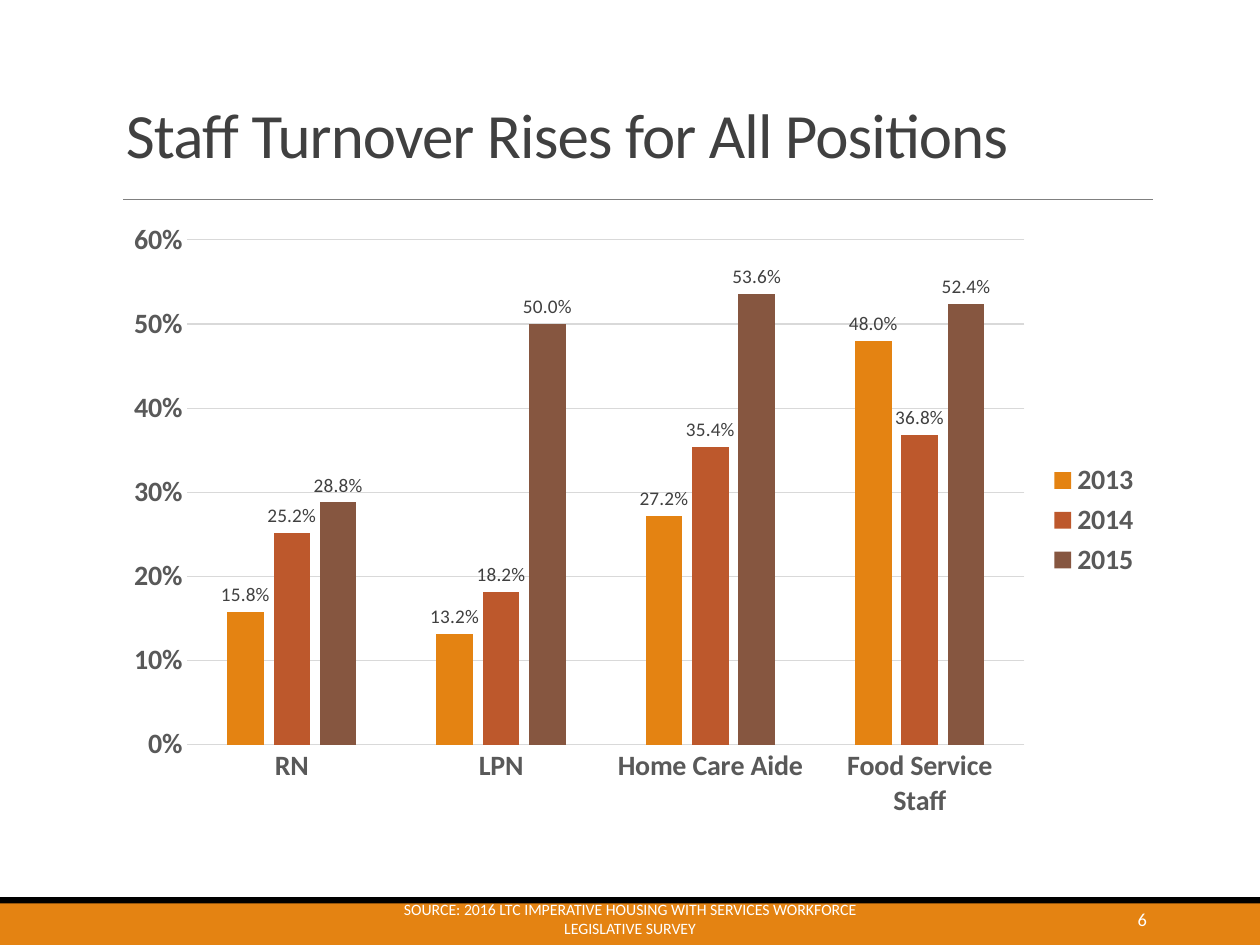
from lxml import etree
from pptx import Presentation
from pptx import util as u
from pptx.chart import data
from pptx.dml import color
from pptx.enum import chart as charts, shapes, text
from pptx.oxml import ns

FONT = "Calibri"
ORANGE = "E48312"
DARK = "404040"
GREY = "595959"
PALE = "D9D9D9"
WHITE = "FFFFFF"
POSITIONS = ["RN", "LPN", "Home Care Aide", "Food Service Staff"]
TURNOVER = [
    ("2013", ORANGE, [0.158, 0.132, 0.272, 0.48]),
    ("2014", "BD582C", [0.252, 0.182, 0.354, 0.368]),
    ("2015", "865640", [0.288, 0.5, 0.536, 0.524]),
]


def rgb(value):
    return color.RGBColor.from_string(value)


def paint(fill, value):
    fill.solid()
    fill.fore_color.rgb = rgb(value)


def stroke(line, value, width):
    paint(line.fill, value)
    line.width = u.Pt(width)


def style(font, size, value, bold=False):
    font.name = FONT
    font.size = u.Pt(size)
    font.bold = bold
    font.color.rgb = rgb(value)


def box(left, top, width, height):
    return [u.Inches(length) for length in (left, top, width, height)]


def add_bar(slide, place, value):
    shape = slide.shapes.add_shape(shapes.MSO_SHAPE.RECTANGLE, *box(*place))
    shape.shadow.inherit = False
    paint(shape.fill, value)
    shape.line.fill.background()


def add_rule(slide, left, right, top):
    rule = slide.shapes.add_connector(
        shapes.MSO_CONNECTOR.STRAIGHT, *box(left, top, right, top))
    stroke(rule.line, "808080", 0.5)
    etree.SubElement(rule._element.spPr, ns.qn("a:effectLst"))


def add_text(slide, place, words, size, value, align,
             anchor=text.MSO_ANCHOR.MIDDLE):
    frame = slide.shapes.add_textbox(*box(*place)).text_frame
    frame.word_wrap = True
    frame.vertical_anchor = anchor
    paragraph = frame.paragraphs[0]
    paragraph.alignment = align
    run = paragraph.add_run()
    run.text = words
    style(run.font, size, value)
    return paragraph


def add_title(slide, words):
    paragraph = add_text(slide, (0.9, 0.31, 8.25, 1.1), words, 36, DARK,
                         text.PP_ALIGN.LEFT, text.MSO_ANCHOR.BOTTOM)
    paragraph.line_spacing = 0.85
    paragraph.runs[0].font._element.set("spc", "-50")


def style_axis(axis):
    axis.major_tick_mark = charts.XL_TICK_MARK.NONE
    axis.minor_tick_mark = charts.XL_TICK_MARK.NONE
    style(axis.tick_labels.font, 16, GREY, True)


def style_series(series, value):
    paint(series.format.fill, value)
    series.invert_if_negative = False
    labels = series.data_labels
    labels.show_value = True
    labels.number_format = "0.0%"
    labels.number_format_is_linked = False
    labels.position = charts.XL_LABEL_POSITION.OUTSIDE_END
    style(labels.font, 11, DARK)


def add_turnover_chart(slide):
    chart_data = data.CategoryChartData(number_format="0.0%")
    chart_data.categories = POSITIONS
    for year, _, values in TURNOVER:
        chart_data.add_series(year, values)
    chart = slide.shapes.add_chart(
        charts.XL_CHART_TYPE.COLUMN_CLUSTERED,
        *box(0.9, 1.67, 8.25, 4.92), chart_data).chart
    style(chart.font, 10, "000000")
    chart.has_title = False

    plot = chart.plots[0]
    plot.vary_by_categories = False
    plot.gap_width = 219
    plot.overlap = -27
    for series, (_, value, _) in zip(plot.series, TURNOVER):
        style_series(series, value)

    style_axis(chart.category_axis)
    stroke(chart.category_axis.format.line, PALE, 0.75)
    value_axis = chart.value_axis
    style_axis(value_axis)
    value_axis.minimum_scale = 0
    value_axis.maximum_scale = 0.6
    value_axis.major_unit = 0.1
    value_axis.tick_labels.number_format = "0%"
    value_axis.tick_labels.number_format_is_linked = False
    value_axis.format.line.fill.background()
    stroke(value_axis.major_gridlines.format.line, PALE, 0.75)

    chart.has_legend = True
    chart.legend.position = charts.XL_LEGEND_POSITION.RIGHT
    chart.legend.include_in_layout = False
    style(chart.legend.font, 16, GREY, True)


def main():
    presentation = Presentation()
    presentation.slide_width = u.Inches(10)
    presentation.slide_height = u.Inches(7.5)
    slide = presentation.slides.add_slide(presentation.slide_layouts[6])
    add_bar(slide, (0, 7.13, 10, 0.37), ORANGE)
    add_bar(slide, (0, 7.12, 10, 0.05), "000000")
    add_rule(slide, 0.98, 9.15, 1.58)
    add_title(slide, "Staff Turnover Rises for All Positions")
    add_turnover_chart(slide)
    add_text(slide, (8.12, 7.13, 1.08, 0.33), "6", 10.5, WHITE,
             text.PP_ALIGN.RIGHT)
    add_text(slide, (3.02, 7.13, 3.96, 0.33),
             "SOURCE: 2016 LTC IMPERATIVE HOUSING WITH SERVICES WORKFORCE "
             "LEGISLATIVE SURVEY", 9, WHITE, text.PP_ALIGN.CENTER)
    presentation.save("out.pptx")


if __name__ == "__main__":
    main()
